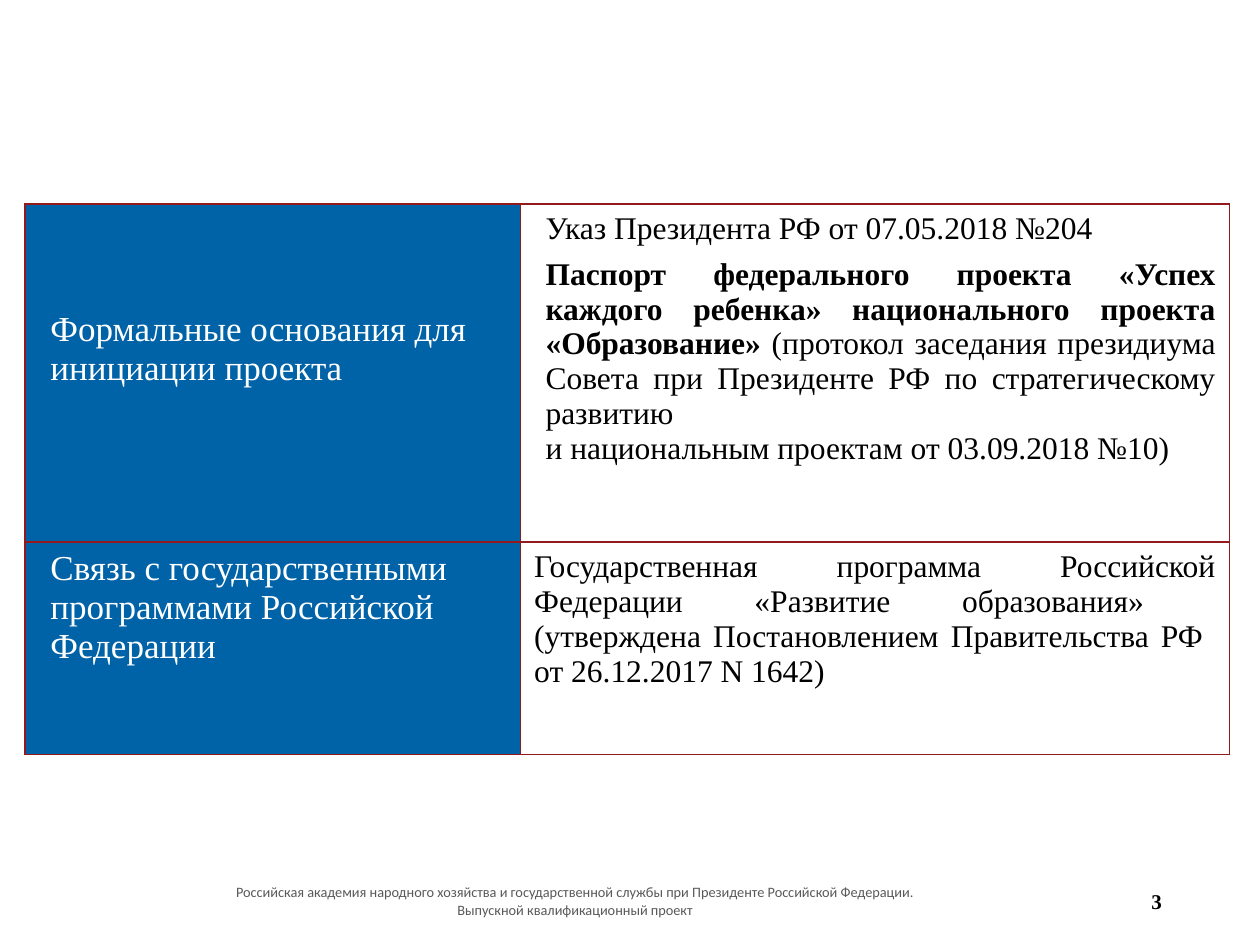
"""Build the slide on the formal grounds of the project and its links to state programmes."""
from dataclasses import dataclass

from lxml import etree
from pptx import Presentation
from pptx import util as u
from pptx.dml.color import RGBColor
from pptx.enum import text
from pptx.oxml import ns


@dataclass(frozen=True)
class Theme:
    blue: str = "0062A7"
    white: str = "FFFFFF"
    black: str = "000000"
    grey: str = "595959"
    border: str = "921A1D"
    serif: str = "Times New Roman"
    sans: str = "Calibri"
    label: float = 20
    body: float = 18
    number: float = 12
    footer: float = 8.2


T = Theme()
LEFT, CENTER, RIGHT, JUSTIFY = (
    text.PP_ALIGN.LEFT, text.PP_ALIGN.CENTER, text.PP_ALIGN.RIGHT, text.PP_ALIGN.JUSTIFY)

ROWS = [
    dict(
        height=2.68, label_top=0.84, indent=0.09,
        label="Формальные основания для инициации проекта",
        body=[
            [("Указ Президента РФ от 07.05.2018 №204", False)],
            [("Паспорт федерального проекта «Успех каждого ребенка» "
              "национального проекта «Образование» ", True),
             ("(протокол заседания президиума Совета при Президенте РФ "
              "по стратегическому развитию \n"
              "и национальным проектам от 03.09.2018 №10)", False)],
        ],
    ),
    dict(
        height=1.69, label_top=0.06, indent=0,
        label="Связь с государственными программами Российской Федерации",
        body=[
            [("Государственная программа Российской Федерации «Развитие образования» \n"
              "(утверждена Постановлением Правительства РФ \n"
              "от 26.12.2017 N 1642)", False)],
        ],
    ),
]
FOOTER = [
    [("Российская академия народного хозяйства и государственной службы "
      "при Президенте Российской Федерации.", False)],
    [("Выпускной квалификационный проект", False)],
]
NUMBER = [[("3", True)]]

COLUMNS = (3.93, 5.63)
TABLE_AT = (0.2, 1.62)
LABEL_INDENT = 0.09
PAD_X, PAD_Y = 0.11, 0.06


def write(tf, paragraphs, size, color, font, align, indent=0, before=0):
    for i, runs in enumerate(paragraphs):
        p = tf.add_paragraph() if i else tf.paragraphs[0]
        p.alignment = align
        p.space_before = u.Pt(before)
        p._p.get_or_add_pPr().set("marL", str(u.Inches(indent)))
        for words, bold in runs:
            for j, line in enumerate(words.split("\n")):
                if j:
                    p.add_line_break()
                r = p.add_run()
                r.text = line
                r.font.size, r.font.name, r.font.bold = u.Pt(size), font, bold
                r.font.color.rgb = RGBColor.from_string(color)


def style_cell(cell, fill, top=PAD_Y):
    cell.margin_left = cell.margin_right = u.Inches(PAD_X)
    cell.margin_top, cell.margin_bottom = u.Inches(top), u.Inches(PAD_Y)
    tc_pr = cell._tc.get_or_add_tcPr()
    for side in ("a:lnL", "a:lnR", "a:lnT", "a:lnB"):
        ln = etree.SubElement(tc_pr, ns.qn(side), w=str(u.Pt(1)))
        solid = etree.SubElement(ln, ns.qn("a:solidFill"))
        etree.SubElement(solid, ns.qn("a:srgbClr"), val=T.border)
    cell.fill.solid()
    cell.fill.fore_color.rgb = RGBColor.from_string(fill)


def add_table(s):
    heights = [row["height"] for row in ROWS]
    box = (*TABLE_AT, sum(COLUMNS), sum(heights))
    table = s.shapes.add_table(len(ROWS), len(COLUMNS), *map(u.Inches, box)).table
    table.first_row = table.horz_banding = False
    for column, width in zip(table.columns, COLUMNS):
        column.width = u.Inches(width)
    for i, row in enumerate(ROWS):
        table.rows[i].height = u.Inches(row["height"])
        label, body = table.cell(i, 0), table.cell(i, 1)
        style_cell(label, T.blue, row["label_top"])
        style_cell(body, T.white)
        write(label.text_frame, [[(row["label"], False)]], T.label, T.white, T.serif,
              LEFT, LABEL_INDENT, 6)
        write(body.text_frame, row["body"], T.body, T.black, T.serif,
              JUSTIFY, row["indent"], 6)


def add_text(s, left, width, paragraphs, *style):
    tf = s.shapes.add_textbox(*map(u.Inches, (left, 6.95, width, 0.4))).text_frame
    tf.word_wrap = True
    tf.vertical_anchor = text.MSO_ANCHOR.MIDDLE
    write(tf, paragraphs, *style)


def main():
    prs = Presentation()
    prs.slide_width, prs.slide_height = u.Inches(10), u.Inches(7.5)
    s = prs.slides.add_slide(prs.slide_layouts[6])
    add_text(s, 0.43, 8.27, FOOTER, T.footer, T.grey, T.sans, CENTER)
    add_text(s, 7.07, 2.25, NUMBER, T.number, T.black, T.serif, RIGHT)
    add_table(s)
    prs.save("out.pptx")


if __name__ == "__main__":
    main()
